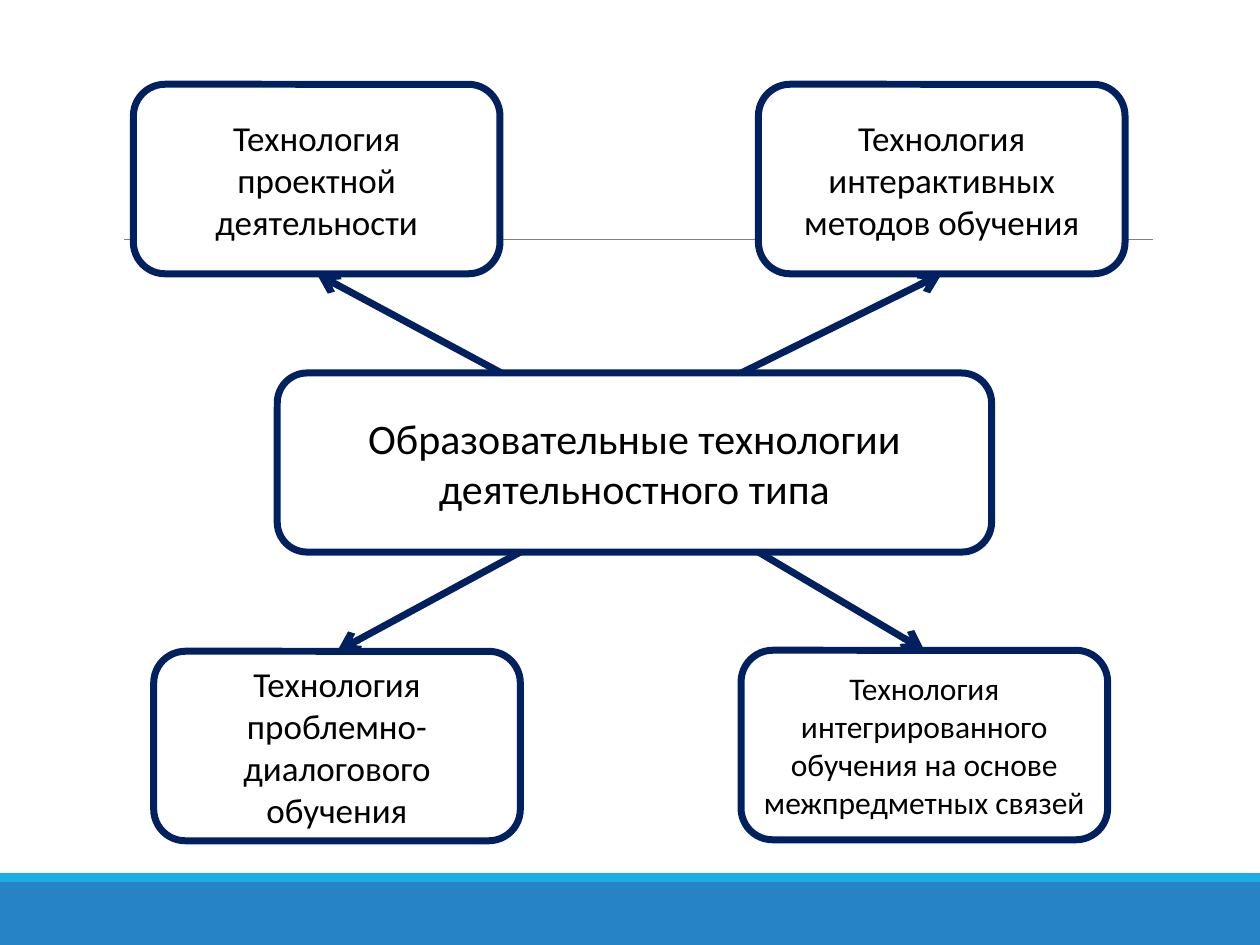
import pptx
import pptx.dml.color
import pptx.enum.shapes
import pptx.enum.text
import pptx.oxml
import pptx.oxml.ns
import pptx.util
from dataclasses import dataclass

Cm = pptx.util.Cm
SHAPE = pptx.enum.shapes.MSO_SHAPE
TOP, BOTTOM = 0, 2


@dataclass(frozen=True)
class Theme:
    font: str = "Calibri"
    text: str = "000000"
    paper: str = "FFFFFF"
    frame: str = "002060"
    rule: str = "808080"
    band: str = "2683C6"
    stripe: str = "1CADE4"
    frame_width: float = 4
    rule_width: float = 0.5
    centre_size: int = 24
    box_size: int = 20
    small_size: int = 18


def rgb(value):
    return pptx.dml.color.RGBColor.from_string(value)


class Builder:
    def __init__(self, s, theme):
        self.s = s
        self.theme = theme

    def shape(self, kind, left, top, width, height, fill):
        sp = self.s.shapes.add_shape(kind, Cm(left), Cm(top), Cm(width), Cm(height))
        sp.shadow.inherit = False
        sp.fill.solid()
        sp.fill.fore_color.rgb = rgb(fill)
        return sp

    def bar(self, top, height, fill):
        sp = self.shape(SHAPE.RECTANGLE, 0, top, 25.4, height, fill)
        sp.line.fill.background()

    def box(self, left, top, width, height, text, size):
        sp = self.shape(SHAPE.ROUNDED_RECTANGLE, left, top, width, height, self.theme.paper)
        sp.line.color.rgb = rgb(self.theme.frame)
        sp.line.width = pptx.util.Pt(self.theme.frame_width)
        tf = sp.text_frame
        tf.word_wrap = True
        tf.vertical_anchor = pptx.enum.text.MSO_ANCHOR.MIDDLE
        tf.text = text
        p = tf.paragraphs[0]
        p.alignment = pptx.enum.text.PP_ALIGN.CENTER
        r = p.runs[0]
        r.font.name = self.theme.font
        r.font.size = pptx.util.Pt(size)
        r.font.color.rgb = rgb(self.theme.text)
        return sp

    def line(self, x1, y1, x2, y2, color, width):
        cxn = self.s.shapes.add_connector(
            pptx.enum.shapes.MSO_CONNECTOR.STRAIGHT, Cm(x1), Cm(y1), Cm(x2), Cm(y2))
        cxn.line.color.rgb = rgb(color)
        cxn.line.width = pptx.util.Pt(width)
        pptx.oxml.ns.qn("a:effectLst")
        cxn._element.spPr.append(pptx.oxml.parse_xml(
            f"<a:effectLst {pptx.oxml.ns.nsdecls('a')}/>"))
        return cxn

    def arrow(self, x, y, target, site):
        cxn = self.line(x, y, x, y, self.theme.frame, self.theme.frame_width)
        cxn.end_connect(target, site)
        cxn.line._get_or_add_ln().append(pptx.oxml.parse_xml(
            f"<a:tailEnd {pptx.oxml.ns.nsdecls('a')} type='arrow'/>"))


def main():
    prs = pptx.Presentation()
    prs.slide_width, prs.slide_height = Cm(25.4), Cm(19.05)
    theme = Theme()
    b = Builder(prs.slides.add_slide(prs.slide_layouts[6]), theme)

    b.bar(17.78, 1.27, theme.band)
    b.bar(17.6, 0.18, theme.stripe)
    b.line(2.49, 4.83, 23.24, 4.83, theme.rule, theme.rule_width)

    top, height = 7.52, 3.61
    b.box(5.59, top, 14.4, height,
          "Образовательные технологии деятельностного типа", theme.centre_size)

    technologies = [
        (2.69, 1.7, "Технология проектной деятельности", theme.box_size, 10.11, BOTTOM),
        (15.29, 1.7, "Технология интерактивных методов обучения", theme.box_size, 14.94, BOTTOM),
        (3.1, 13.13, "Технология проблемно-диалогового обучения", theme.box_size, 10.49, TOP),
        (14.94, 13.11, "Технология интегрированного обучения на основе межпредметных связей",
         theme.small_size, 15.29, TOP),
    ]
    for left, y, text, size, start, site in technologies:
        sp = b.box(left, y, 7.39, 3.82, text, size)
        b.arrow(start, top if site == BOTTOM else top + height, sp, site)

    prs.save("out.pptx")


if __name__ == "__main__":
    main()
